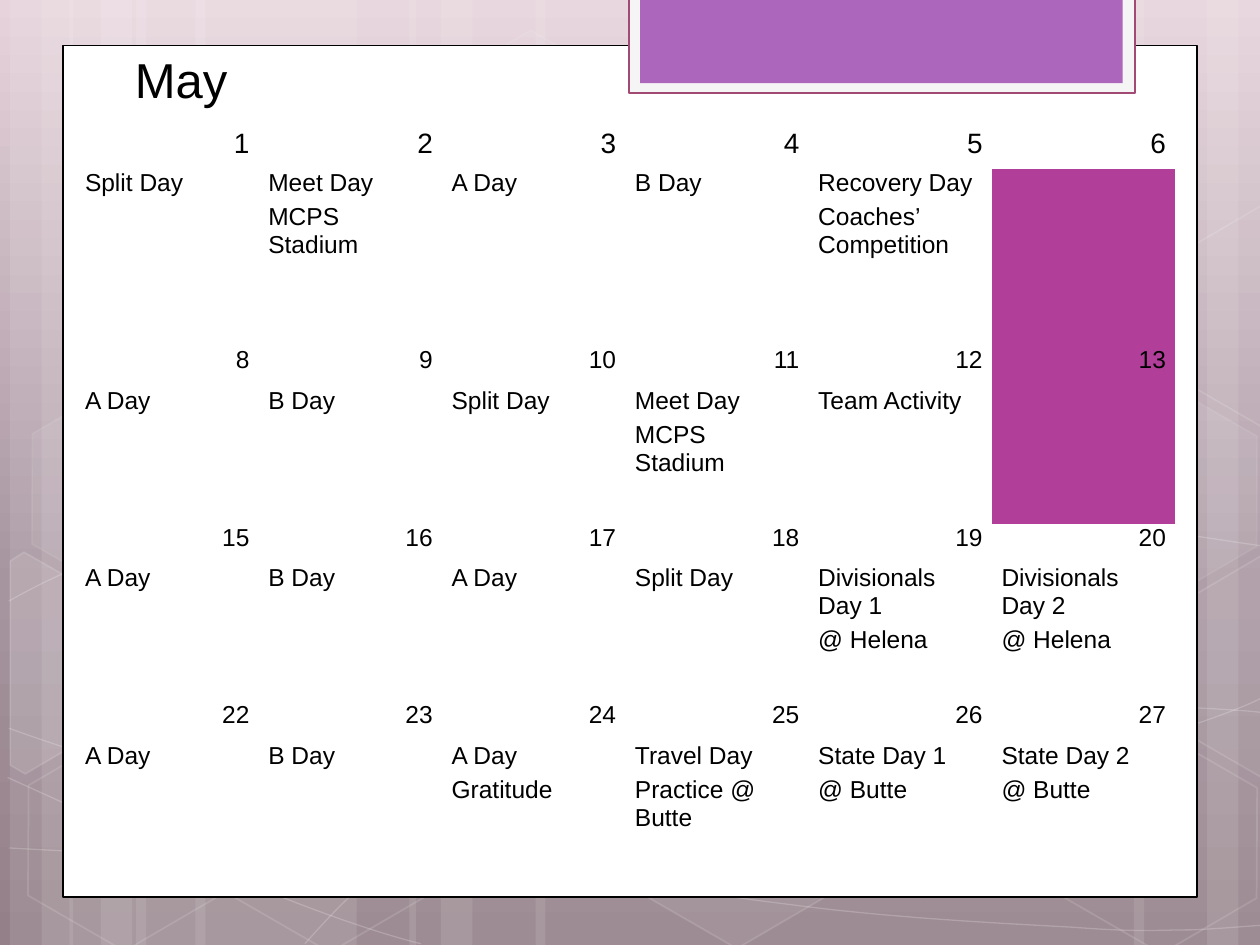
"""Build the May practice calendar slide."""
from copy import deepcopy
from math import cos, radians, sin
from lxml.etree import SubElement
from pptx import Presentation
from pptx.dml.color import RGBColor
from pptx.enum.shapes import MSO_SHAPE as SHAPE
from pptx.enum.text import MSO_ANCHOR as ANCHOR, MSO_AUTO_SIZE as AUTO, PP_ALIGN as ALIGN
from pptx.oxml.ns import qn
from pptx.util import Inches, Pt


def paint(fill, color, alpha=100):
    fill.solid()
    fill.fore_color.rgb = RGBColor.from_string(color)
    if alpha < 100:
        SubElement(fill.fore_color._color._xClr, qn("a:alpha")).set("val", str(alpha * 1000))


def decorate(shape, fill, fill_alpha=100, line=None, width=1, line_alpha=100):
    shape.shadow.inherit = False
    if fill and fill_alpha:
        paint(shape.fill, fill, fill_alpha)
    else:
        shape.fill.background()
    if line:
        paint(shape.line.fill, line, line_alpha)
        shape.line.width = Pt(width)
    else:
        shape.line.fill.background()


prs = Presentation()
prs.slide_width, prs.slide_height = Inches(10), Inches(7.5)
slide = prs.slides.add_slide(prs.slide_layouts[5])
shapes = slide.shapes

backdrop = slide.background.fill
backdrop.gradient()
backdrop.gradient_angle = 270
first_stop = backdrop.gradient_stops[0]._gs
first_stop.addnext(deepcopy(first_stop))
for stop, (position, color) in zip(
        backdrop.gradient_stops, [(0, "E6D3DB"), (0.62, "A6949E"), (1, "938088")]):
    stop.position = position
    stop.color.rgb = RGBColor.from_string(color)

scenery = shapes.add_group_shape().shapes
bands = [(1.08, 1.75), (0.08, 0.5), (0.33, 0.83), (1.55, 1.75), (0.55, 0.5), (0.8, 0.83),
         (7.33, 1.75), (9.58, 0.5), (9, 0.83), (4.25, 3.08), (3.25, 0.5), (3.5, 0.83)]
for left, width in bands:
    band = scenery.add_shape(SHAPE.RECTANGLE, Inches(left), 0, Inches(width), prs.slide_height)
    decorate(band, "FFFFFF", 10)

curves = [
    [(0.07, 6.73), (0.61, 6.76), (1.15, 6.79), (1.9, 6.78), (2.65, 6.77), (3.58, 6.75),
     (4.58, 6.65), (5.58, 6.55), (7, 6.36), (7.92, 6.17), (8.83, 5.98), (9.77, 5.68),
     (10.07, 5.51)],
    [(0.07, 4.77), (0.36, 4.61), (0.65, 4.46), (1.21, 4.31), (1.78, 4.16), (2.59, 3.94),
     (3.47, 3.87), (4.36, 3.8), (5.44, 3.79), (6.54, 3.87), (7.64, 3.95), (9.47, 4.26),
     (10.07, 4.34)],
    [(0.06, 6.17), (1.27, 6.72), (2.47, 7.27), (3.34, 7.49)],
    [(0.07, 5.78), (0.38, 5.89), (0.7, 6), (1.28, 6.16), (1.86, 6.31), (2.73, 6.56),
     (3.57, 6.73), (4.4, 6.9), (5.45, 7.08), (6.28, 7.18), (7.11, 7.29), (8, 7.33),
     (8.53, 7.36), (9.05, 7.4), (9.19, 7.38), (9.45, 7.38), (9.71, 7.37), (9.89, 7.35),
     (10.07, 7.34)],
    [(2.42, 7.49), (2.6, 7.29), (2.78, 7.09), (3.02, 6.91), (3.26, 6.73), (3.6, 6.53),
     (3.88, 6.39), (4.16, 6.25), (4.33, 6.19), (4.7, 6.09), (5.06, 5.99), (5.73, 5.85),
     (6.08, 5.78), (6.44, 5.71), (6.49, 5.71), (6.8, 5.69), (7.11, 5.66), (7.6, 5.63),
     (7.94, 5.62), (8.29, 5.61), (8.86, 5.62), (8.86, 5.62), (9.08, 5.62), (9.31, 5.62),
     (9.53, 5.62), (9.71, 5.63), (9.88, 5.64), (9.97, 5.65), (10.06, 5.66), (10.03, 5.65),
     (10.06, 5.66)],
]
for controls in curves:
    controls = [(Inches(x), Inches(y)) for x, y in controls]
    builder = scenery.build_freeform(*controls[0])
    builder.add_line_segments(controls[1:], close=False)
    curve = builder.convert_to_shape()
    segments = list(curve.element.iter(qn("a:lnTo")))
    for start in range(0, len(segments), 3):
        bezier = SubElement(segments[start].getparent(), qn("a:cubicBezTo"))
        for segment in segments[start:start + 3]:
            bezier.append(segment[0])
            segment.getparent().remove(segment)
    decorate(curve, None, line="FFFFFF", width=0.75, line_alpha=20)

hexagons = [(3.34, 0.36, 4, 8), (4.97, 5.89, 6, 12), (0.11, 5.91, 0, 12), (0.14, 3.12, 7, 8),
            (1.74, 5.92, 0, 12), (7.53, 4.53, 10, 12), (8.34, 5.93, 0, 12), (8.34, 3.14, 7, 8)]
for left, top, fill_alpha, line_alpha in hexagons:
    hexagon = scenery.add_shape(
        SHAPE.HEXAGON, Inches(left), Inches(top), Inches(1.75), Inches(1.52))
    hexagon.adjustments[0] = 0.285
    hexagon.rotation = 30
    decorate(hexagon, "FFFFFF", fill_alpha, "FFFFFF", 1, line_alpha)

tilt_cos, tilt_sin = cos(radians(30)), sin(radians(30))
cut_hexagons = [
    ((0.36, 5.35), 10,
     [(0.08, 4.45), (0.19, 4.38), (0.96, 4.82), (0.95, 5.7), (0.2, 6.14), (0.08, 6.07)]),
    ((9.85, 5.2), 4,
     [(9.26, 4.85), (10.01, 4.41), (10.09, 4.46), (10.09, 6.13), (10.02, 6.17), (9.26, 5.73)]),
    ((9.85, 2.41), 0,
     [(9.26, 2.07), (10.01, 1.63), (10.1, 1.68), (10.09, 3.35), (10.02, 3.39), (9.26, 2.95)]),
]
for (mid_x, mid_y), fill_alpha, corners in cut_hexagons:
    upright = [(Inches(mid_x + (x - mid_x) * tilt_cos + (y - mid_y) * tilt_sin),
                Inches(mid_y + (y - mid_y) * tilt_cos - (x - mid_x) * tilt_sin))
               for x, y in corners]
    builder = scenery.build_freeform(*upright[0])
    builder.add_line_segments(upright[1:], close=True)
    cut_hexagon = builder.convert_to_shape()
    cut_hexagon.rotation = 30
    decorate(cut_hexagon, "FFFFFF", fill_alpha, "FFFFFF", 1, 12)

panels = [((0.5, 0.36, 9, 6.76), "FFFFFF", "000000", 0.75),
          ((4.99, -0.02, 4.02, 0.76), "F5F5F5", "A24A73", 1.25),
          ((5.08, -0.02, 3.83, 0.68), "AC66BB", None, 0)]
for box, fill, line, width in panels:
    panel = shapes.add_shape(SHAPE.RECTANGLE, *map(Inches, box))
    decorate(panel, fill, line=line, width=width)

month = shapes.title
month.element.getparent().append(month.element)
month.left, month.top, month.width, month.height = map(Inches, (0.97, 0.34, 2.74, 0.57))
month.text_frame.auto_size = AUTO.SHAPE_TO_FIT_TEXT
month.text_frame.vertical_anchor = ANCHOR.TOP
heading = month.text_frame.paragraphs[0]
heading.alignment = ALIGN.LEFT
run = heading.add_run()
run.text = "May"
run.font.size, run.font.name = Pt(28), "Arial"
paint(run.font.fill, "000000")

weeks = [
    ["Split Day", "Meet Day|MCPS Stadium", "A Day", "B Day",
     "Recovery Day|Coaches’ Competition", ""],
    ["A Day", "B Day", "Split Day", "Meet Day|MCPS Stadium", "Team Activity", ""],
    ["A Day", "B Day", "A Day", "Split Day",
     "Divisionals Day 1|@ Helena", "Divisionals Day 2|@ Helena"],
    ["A Day", "B Day", "A Day|Gratitude", "Travel Day|Practice @ Butte",
     "State Day 1|@ Butte", "State Day 2|@ Butte"],
]
calendar = shapes.add_table(8, 6, Inches(0.6), Inches(1.02), Inches(8.73), Inches(5.96)).table
calendar.first_row = calendar.horz_banding = False
calendar._tbl.tblPr.find(qn("a:tableStyleId")).text = "{2D5ABB26-0587-4C30-8999-92F81FD0307C}"
for week, plans in enumerate(weeks):
    calendar.rows[2 * week].height = Inches(0.32)
    calendar.rows[2 * week + 1].height = Inches(1.09 if week else 1.41)
    for day, plan in enumerate(plans):
        date = str(1 + 7 * week + day)
        for row, text, align, before, size in (
                (2 * week, date, ALIGN.RIGHT, 6, 14 if week else 16),
                (2 * week + 1, plan, ALIGN.LEFT, 2, 14)):
            cell = calendar.cell(row, day)
            cell.margin_left = cell.margin_right = Pt(5.4)
            cell.margin_top = cell.margin_bottom = 0
            if day == 5 and row in (1, 2, 3):
                paint(cell.fill, "B13F9A")
            for index, entry in enumerate(text.split("|") if text else []):
                frame = cell.text_frame
                paragraph = frame.add_paragraph() if index else frame.paragraphs[0]
                paragraph.alignment = align
                paragraph.space_before, paragraph.space_after = Pt(before), Pt(2)
                run = paragraph.add_run()
                run.text = entry
                run.font.size, run.font.name = Pt(size), "Arial"
                paint(run.font.fill, "000000")

prs.save("out.pptx")
